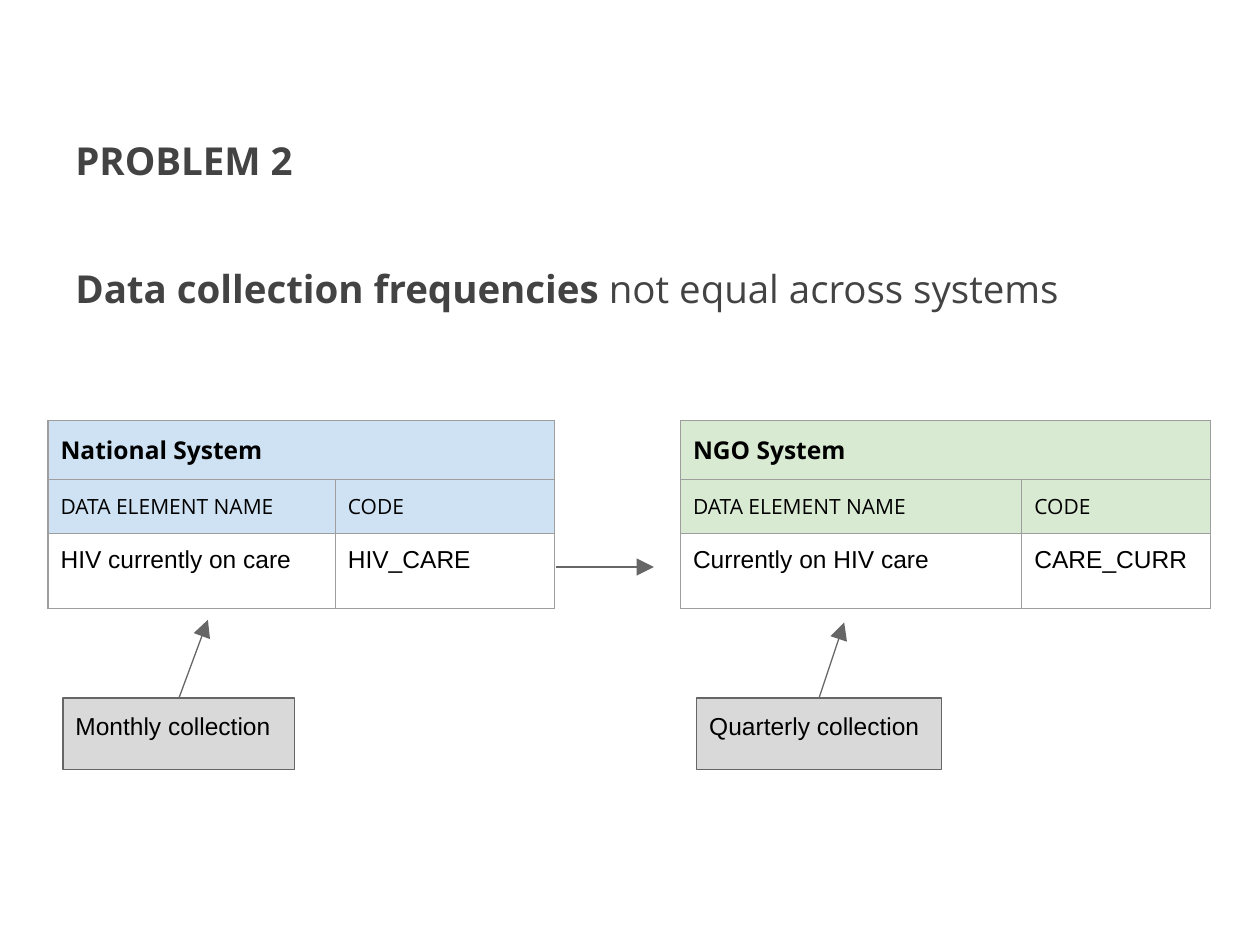
from dataclasses import dataclass

from lxml.etree import SubElement
from pptx import Presentation
from pptx.dml.color import RGBColor
from pptx.enum.shapes import MSO_CONNECTOR, MSO_SHAPE
from pptx.enum.text import MSO_ANCHOR
from pptx.oxml import parse_xml
from pptx.oxml.ns import nsdecls, qn
from pptx.util import Pt


@dataclass(frozen=True)
class Theme:
    heading_font: str = "Open Sans"
    body_font: str = "Arial"
    heading_size: int = 22
    body_size: int = 14
    label_size: int = 12
    heading: str = "434343"
    text: str = "000000"
    national: str = "CFE2F3"
    ngo: str = "D9EAD3"
    note: str = "D9D9D9"
    line: str = "666666"
    border: str = "9E9E9E"
    line_width: float = 0.75
    inset: float = 7.2


theme = Theme()


def write(frame, runs, font, size, color):
    """Fill a text frame with (text, bold) runs in one paragraph."""
    frame.word_wrap = True
    frame.margin_left = frame.margin_right = Pt(theme.inset)
    frame.margin_top = frame.margin_bottom = Pt(theme.inset)
    for text, bold in runs:
        run = frame.paragraphs[0].add_run()
        run.text = text
        run.font.name = font
        run.font.size = Pt(size)
        run.font.bold = bold
        run.font.color.rgb = RGBColor.from_string(color)


def add_arrow(shapes, start, end):
    arrow = shapes.add_connector(MSO_CONNECTOR.STRAIGHT, *map(Pt, start + end))
    arrow.line.color.rgb = RGBColor.from_string(theme.line)
    arrow.line.width = Pt(theme.line_width)
    SubElement(arrow.line._get_or_add_ln(), qn("a:tailEnd"), type="triangle", w="lg", len="lg")
    SubElement(arrow._element.spPr, qn("a:effectLst"))
    return arrow


presentation = Presentation()
presentation.slide_width, presentation.slide_height = Pt(720), Pt(540)
slide = presentation.slides.add_slide(presentation.slide_layouts[6])
shapes = slide.shapes

# Headings
headings = [
    (21.6, 90, MSO_ANCHOR.BOTTOM, [("PROBLEM 2", True)]),
    (144, 61.2, MSO_ANCHOR.TOP,
     [("Data collection frequencies", True), (" not equal across systems", False)]),
]
for top, height, anchor, runs in headings:
    box = shapes.add_textbox(Pt(36), Pt(top), Pt(648), Pt(height))
    box.text_frame.vertical_anchor = anchor
    write(box.text_frame, runs, theme.heading_font, theme.heading_size, theme.heading)

# System tables
row_heights = [33.6, 31, 42.5]
row_styles = [
    (theme.heading_font, theme.body_size, True),
    (theme.heading_font, theme.label_size, False),
    (theme.body_font, theme.body_size, False),
]
systems = [
    (27.4, [164.2, 125.3], theme.national, "National System", ["HIV currently on care", "HIV_CARE"]),
    (388.8, [195.1, 108], theme.ngo, "NGO System", ["Currently on HIV care", "CARE_CURR"]),
]
for left, widths, header_color, name, element in systems:
    rows = [[name, ""], ["DATA ELEMENT NAME", "CODE"], element]
    table = shapes.add_table(3, 2, Pt(left), Pt(240.5), Pt(sum(widths)), Pt(sum(row_heights))).table
    table.first_row = table.horz_banding = False
    for column, width in zip(table.columns, widths):
        column.width = Pt(width)
    for row, height in zip(table.rows, row_heights):
        row.height = Pt(height)
    table.cell(0, 0).merge(table.cell(0, 1))
    for row_index, (texts, (font, size, bold)) in enumerate(zip(rows, row_styles)):
        for column_index, text in enumerate(texts):
            cell = table.cell(row_index, column_index)
            properties = cell._tc.get_or_add_tcPr()
            for side in ("lnL", "lnR", "lnT", "lnB"):
                properties.append(parse_xml(
                    f'<a:{side} {nsdecls("a")} w="{Pt(theme.line_width)}"><a:solidFill>'
                    f'<a:srgbClr val="{theme.border}"/></a:solidFill></a:{side}>'))
            if row_index < 2:
                cell.fill.solid()
                cell.fill.fore_color.rgb = RGBColor.from_string(header_color)
            else:
                cell.fill.background()
            cell.margin_left = cell.margin_right = Pt(theme.inset)
            cell.margin_top = cell.margin_bottom = Pt(theme.inset)
            if text:
                write(cell.text_frame, [(text, bold)], font, size, theme.text)

add_arrow(shapes, (317.5, 324), (373.7, 324))

# Collection notes, each pointing up at its table
note_top = 398.9
notes = [
    ("Monthly collection", 36, 132.5, (118.8, 354.2)),
    ("Quarterly collection", 398.2, 139.7, (482.4, 355.7)),
]
for text, left, width, target in notes:
    note = shapes.add_shape(MSO_SHAPE.RECTANGLE, Pt(left), Pt(note_top), Pt(width), Pt(41))
    note.shadow.inherit = False
    note.fill.solid()
    note.fill.fore_color.rgb = RGBColor.from_string(theme.note)
    note.line.color.rgb = RGBColor.from_string(theme.line)
    note.line.width = Pt(theme.line_width)
    note.text_frame.vertical_anchor = MSO_ANCHOR.TOP
    write(note.text_frame, [(text, False)], theme.body_font, theme.body_size, theme.text)
    note.text_frame.paragraphs[0].alignment = 1
    arrow = add_arrow(shapes, (left + width / 2, note_top), target)
    arrow.begin_connect(note, 0)

presentation.save("out.pptx")
